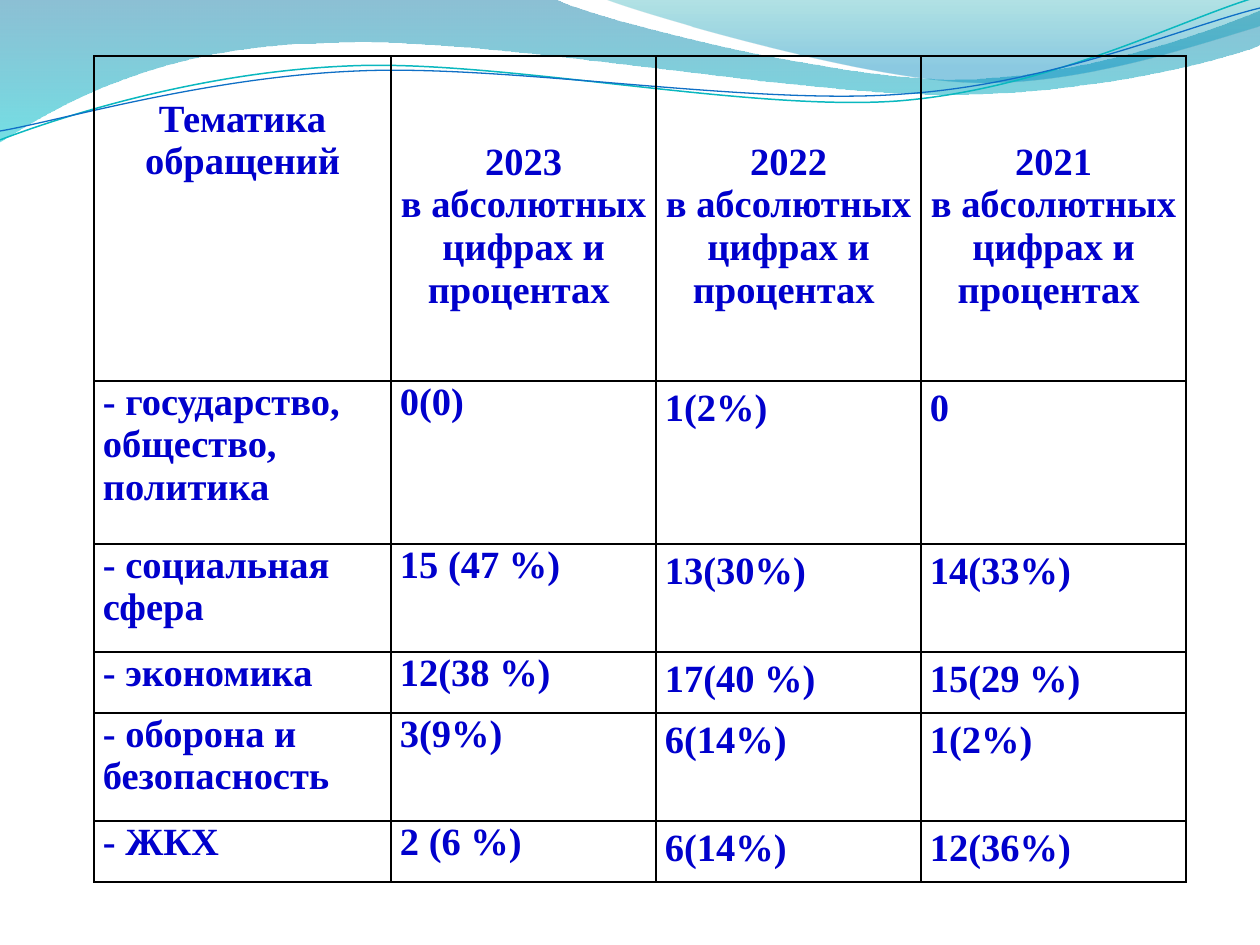
import math

import pptx
import pptx.util
import pptx.dml.color
import pptx.enum.text
import pptx.oxml
import pptx.oxml.ns

PX = 7257.14  # EMU per px, 126 px to the inch
A_NS = pptx.oxml.ns.nsdecls("a")

# Waves: start point, then segments; two numbers are a line, six a cubic curve
BANDS = [
    ((0, 0),
     [(554, -1), (600, 21, 837, 79, 955, 79), (1074, 79, 1207, 33, 1260, 11),
      (1261, 45), (1239, 55, 1096, 96, 940, 94), (784, 94, 481, 35, 324, 43),
      (163, 45, 58, 105, -1, 142)],
     [(0, "0074A1", 45), (100, "00C6CF", 55)]),
    ((604, -1),
     [(641, 14, 859, 78, 969, 82), (1079, 87, 1211, 40, 1260, 26), (1260, 0)],
     [(0, "00A1A9", 30), (80, "008BBF", 45)]),
]
RIBBONS = [
    ((0, 140),
     [(60, 117, 199, 72, 349, 66), (498, 59, 747, 112, 898, 101),
      (1049, 89, 1182, 19, 1257, -3)],
     "0AB8BF", 0.85),
    ((0, 131),
     [(59, 121, 207, 77, 357, 71), (508, 64, 752, 106, 903, 94),
      (1053, 84, 1186, 26, 1260, 8)],
     "0F6FC6", 0.75),
]
RIBBON_TILT = -2.7  # degrees
RIBBON_CENTRE = (629, 73)

YEARS = ["2023", "2022", "2021"]
UNITS = "в абсолютных цифрах и процентах "
TOPICS = [
    ("- государство, общество, политика", "0(0)", "1(2%)", "0"),
    ("- социальная сфера", "15 (47 %)", "13(30%)", "14(33%)"),
    ("- экономика", "12(38 %)", "17(40 %)", "15(29 %)"),
    ("- оборона и безопасность", "3(9%)", "6(14%)", "1(2%)"),
    ("- ЖКХ", "2 (6 %)", "6(14%)", "12(36%)"),
]
HEADER = ["Тематика обращений"] + [f"{year}\n{UNITS}" for year in YEARS]
TABLE_LEFT, TABLE_TOP = 94, 56
COLUMNS = [297, 265, 265, 265]
ROWS = [325, 163, 108, 61, 108, 61]
TOPIC_DROP, YEAR_DROP = 42, 85


def px(length):
    return pptx.util.Emu(round(length * PX))


def rgb(value):
    return pptx.dml.color.RGBColor.from_string(value)


def turn(point, degrees):
    """Turn a point clockwise about the ribbons' centre."""
    angle = math.radians(degrees)
    dx, dy = (p - c for p, c in zip(point, RIBBON_CENTRE))
    return (RIBBON_CENTRE[0] + dx * math.cos(angle) - dy * math.sin(angle),
            RIBBON_CENTRE[1] + dx * math.sin(angle) + dy * math.cos(angle))


def add_wave(slide, start, segments, close, tilt=0):
    def place(point):
        return tuple(px(p) for p in turn(point, -tilt))

    curves = [[place(s[i:i + 2]) for i in range(0, len(s), 2)] for s in segments]
    builder = slide.shapes.build_freeform(*place(start), scale=1.0)
    builder.add_line_segments([curve[-1] for curve in curves], close=close)
    wave = builder.convert_to_shape()

    # Bend the straight steps that have control points
    steps = list(wave._element.iter(pptx.oxml.ns.qn("a:lnTo")))
    for step, curve in zip(steps, curves):
        if len(curve) == 3:
            points = "".join(f'<a:pt x="{x - wave.left}" y="{y - wave.top}"/>'
                             for x, y in curve)
            step.getparent().replace(step, pptx.oxml.parse_xml(
                f"<a:cubicBezTo {A_NS}>{points}</a:cubicBezTo>"))
    wave.rotation = tilt
    wave.shadow.inherit = False
    return wave


def fill_gradient(shape, stops):
    shape.fill.background()
    properties = shape._element.spPr
    stop_xml = "".join(
        f'<a:gs pos="{position * 1000}"><a:srgbClr val="{colour}">'
        f'<a:alpha val="{opacity * 1000}"/></a:srgbClr></a:gs>'
        for position, colour, opacity in stops)
    gradient = pptx.oxml.parse_xml(
        f'<a:gradFill {A_NS} rotWithShape="1"><a:gsLst>{stop_xml}</a:gsLst>'
        '<a:lin ang="5400000" scaled="0"/></a:gradFill>')
    properties.replace(properties.find(pptx.oxml.ns.qn("a:noFill")), gradient)


def outline_cell(cell):
    properties = cell._tc.get_or_add_tcPr()
    for order, side in enumerate(("lnL", "lnR", "lnT", "lnB")):
        properties.insert(order, pptx.oxml.parse_xml(
            f'<a:{side} {A_NS} w="12700"><a:solidFill><a:srgbClr val="000000"/>'
            f'</a:solidFill></a:{side}>'))


def fill_cell(cell, text, row, column):
    cell.fill.background()
    outline_cell(cell)
    cell.margin_left = cell.margin_right = px(9)
    cell.margin_top = cell.margin_bottom = 0
    if row == 0:
        cell.margin_top = px(YEAR_DROP if column else TOPIC_DROP)
    cell.text = text
    for paragraph in cell.text_frame.paragraphs:
        font = paragraph.font
        font.name, font.size, font.bold = "Times New Roman", pptx.util.Pt(22), True
        font.color.rgb = rgb("0000CC")
        if row == 0:
            paragraph.alignment = pptx.enum.text.PP_ALIGN.CENTER
        elif column >= 2:
            paragraph.line_spacing = 1.15


def main():
    deck = pptx.Presentation()
    deck.slide_width, deck.slide_height = px(1260), px(945)
    slide = deck.slides.add_slide(deck.slide_layouts[6])

    # Waves along the top
    for start, segments, stops in BANDS:
        band = add_wave(slide, start, segments, True)
        fill_gradient(band, stops)
        band.line.fill.background()
    for start, segments, colour, width in RIBBONS:
        ribbon = add_wave(slide, start, segments, False, RIBBON_TILT)
        ribbon.fill.background()
        ribbon.line.color.rgb = rgb(colour)
        ribbon.line.width = pptx.util.Pt(width)

    # Table of appeals by topic and year
    appeals = slide.shapes.add_table(
        len(ROWS), len(COLUMNS), px(TABLE_LEFT), px(TABLE_TOP),
        px(sum(COLUMNS)), px(sum(ROWS))).table
    appeals.first_row = appeals.horz_banding = False
    for column, width in zip(appeals.columns, COLUMNS):
        column.width = px(width)
    for row, height in zip(appeals.rows, ROWS):
        row.height = px(height)
    for r, texts in enumerate([HEADER, *TOPICS]):
        for c, text in enumerate(texts):
            fill_cell(appeals.cell(r, c), text, r, c)

    deck.save("out.pptx")


if __name__ == "__main__":
    main()
